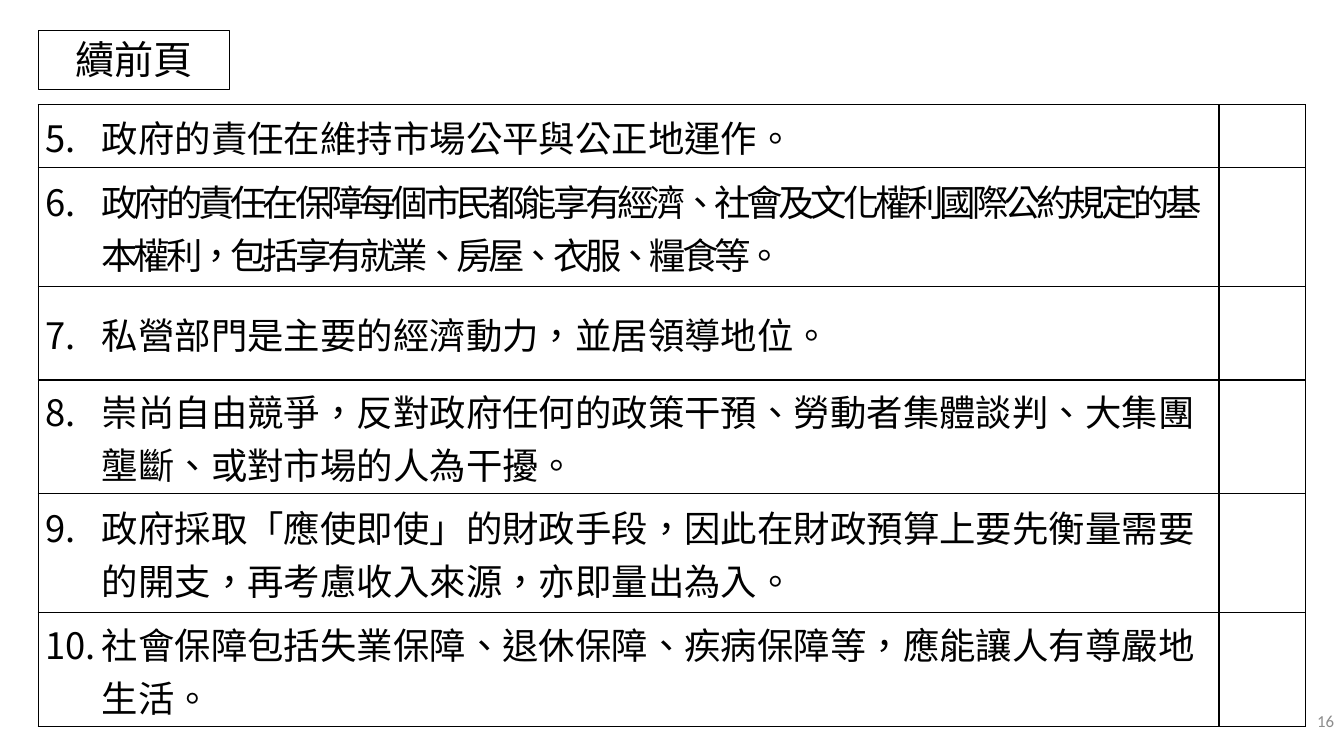
from dataclasses import dataclass

from lxml.etree import SubElement
from pptx import Presentation
from pptx.dml.color import RGBColor
from pptx.enum.shapes import MSO_SHAPE
from pptx.enum.text import MSO_ANCHOR, PP_ALIGN
from pptx.oxml.ns import qn
from pptx.util import Inches, Pt

BLACK = "000000"
GREY = "8C8C8C"
NUMBER_INDENT = Inches(0.56)
COLUMN_WIDTHS = (11.71, 0.86)
FIRST_NUMBER = 5


@dataclass
class Statement:
    text: str
    height: float
    spacing: int = 0


STATEMENTS = [
    Statement("政府的責任在維持市場公平與公正地運作。", 0.62),
    Statement("政府的責任在保障每個市民都能享有經濟、社會及文化權利國際公約規定的基本權利，"
              "包括享有就業、房屋、衣服、糧食等。", 1.18, spacing=-3),
    Statement("私營部門是主要的經濟動力，並居領導地位。", 0.93),
    Statement("崇尚自由競爭，反對政府任何的政策干預、勞動者集體談判、大集團壟斷、"
              "或對市場的人為干擾。", 1.13),
    Statement("政府採取「應使即使」的財政手段，因此在財政預算上要先衡量需要的開支，"
              "再考慮收入來源，亦即量出為入。", 1.18),
    Statement("社會保障包括失業保障、退休保障、疾病保障等，應能讓人有尊嚴地生活。", 1.13),
]


def color(value: str) -> RGBColor:
    return RGBColor.from_string(value)


def write(frame, text: str, *, size: float, font: str = "Calibri", ink: str = BLACK,
          align=PP_ALIGN.LEFT, spacing: int = 0):
    """Put one formatted paragraph in a text frame and return it."""
    frame.word_wrap = True
    para = frame.paragraphs[0]
    para.alignment = align
    span = para.add_run()
    span.text = text
    span.font.size = Pt(size)
    span.font.name = font
    span.font.color.rgb = color(ink)
    properties = span.font._element
    properties.set("lang", "zh-TW")
    if spacing:
        properties.set("spc", str(spacing * 100))
    return para


def number_paragraph(para, number: int) -> None:
    properties = para._p.get_or_add_pPr()
    properties.set("marL", str(NUMBER_INDENT))
    properties.set("indent", str(-NUMBER_INDENT))
    SubElement(properties, qn("a:buFont"), typeface="+mj-lt")
    SubElement(properties, qn("a:buAutoNum"), type="arabicPeriod", startAt=str(number))


def style_cell(cell) -> None:
    """Give a cell black borders on all sides and no fill."""
    cell.vertical_anchor = MSO_ANCHOR.MIDDLE
    cell.margin_left = cell.margin_right = Inches(0.07)
    cell.margin_top = cell.margin_bottom = 0
    properties = cell._tc.get_or_add_tcPr()
    for side in ("a:lnL", "a:lnR", "a:lnT", "a:lnB"):
        border = SubElement(properties, qn(side), w=str(Pt(1)))
        fill = SubElement(border, qn("a:solidFill"))
        SubElement(fill, qn("a:srgbClr"), val=BLACK)
    cell.fill.background()


def add_page_number(page) -> None:
    box = page.shapes.add_textbox(Inches(10.33), Inches(6.95), Inches(3), Inches(0.4))
    box.text_frame.vertical_anchor = MSO_ANCHOR.MIDDLE
    write(box.text_frame, "16", size=12, ink=GREY, align=PP_ALIGN.RIGHT)


def add_statement_table(page) -> None:
    height = sum(statement.height for statement in STATEMENTS)
    table = page.shapes.add_table(
        len(STATEMENTS), len(COLUMN_WIDTHS), Inches(0.38), Inches(1.04),
        Inches(sum(COLUMN_WIDTHS)), Inches(height)).table
    table.first_row = table.horz_banding = False
    for column, width in zip(table.columns, COLUMN_WIDTHS):
        column.width = Inches(width)
    for index, statement in enumerate(STATEMENTS):
        row = table.rows[index]
        row.height = Inches(statement.height)
        for cell in row.cells:
            style_cell(cell)
        para = write(row.cells[0].text_frame, statement.text, size=26,
                     font="Times New Roman", spacing=statement.spacing)
        number_paragraph(para, FIRST_NUMBER + index)


def add_heading(page) -> None:
    box = page.shapes.add_shape(
        MSO_SHAPE.RECTANGLE, Inches(0.38), Inches(0.3), Inches(1.9), Inches(0.59))
    box.shadow.inherit = False
    box.fill.background()
    box.line.color.rgb = color(BLACK)
    box.line.width = Pt(0.75)
    box.text_frame.vertical_anchor = MSO_ANCHOR.TOP
    write(box.text_frame, "續前頁", size=28, align=PP_ALIGN.CENTER)


def main() -> None:
    deck = Presentation()
    deck.slide_width, deck.slide_height = Inches(13.33), Inches(7.5)
    page = deck.slides.add_slide(deck.slide_layouts[6])
    add_page_number(page)
    add_statement_table(page)
    add_heading(page)
    deck.save("out.pptx")


if __name__ == "__main__":
    main()
